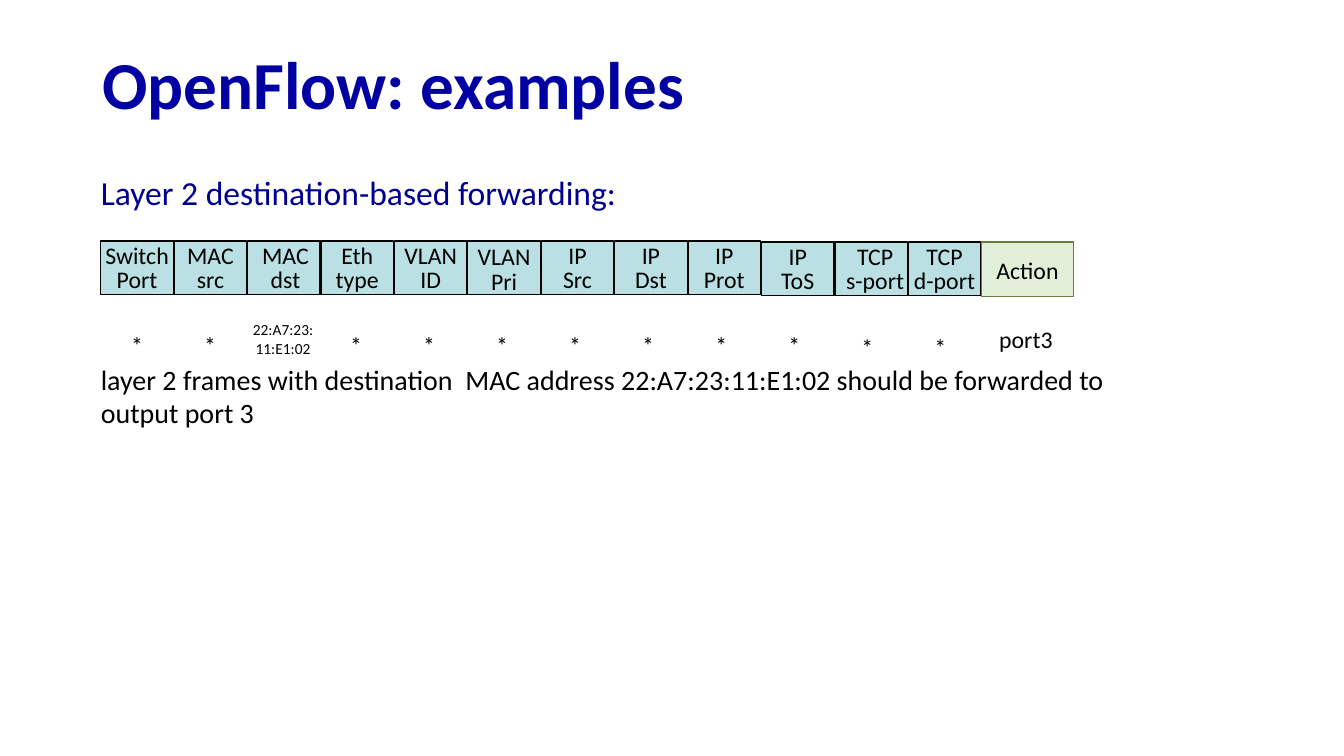
from pptx import Presentation
from pptx.dml.color import RGBColor
from pptx.enum.shapes import MSO_SHAPE
from pptx.enum.text import MSO_ANCHOR, PP_ALIGN
from pptx.util import Cm, Pt


def color(value):
    return RGBColor.from_string(value)


def write(shape, text, size, hue="000000", align=PP_ALIGN.CENTER, spacing=1.0,
          margins=(0, 0, 0, 0), bold=False):
    frame = shape.text_frame
    frame.word_wrap = True
    frame.vertical_anchor = MSO_ANCHOR.MIDDLE
    frame.margin_left, frame.margin_top, frame.margin_right, frame.margin_bottom = (
        Cm(margin) for margin in margins)
    frame.text = text
    for para in frame.paragraphs:
        para.alignment = align
        para.line_spacing = spacing
        for span in para.runs:
            span.font.name = "Calibri"
            span.font.size = Pt(size)
            span.font.bold = bold
            span.font.color.rgb = color(hue)


deck = Presentation()
deck.slide_width, deck.slide_height = Cm(33.87), Cm(19.05)
page = deck.slides.add_slide(deck.slide_layouts[6])

# Title, subtitle and explanation
title = page.shapes.add_textbox(Cm(2.33), Cm(0.97), Cm(29.21), Cm(2.49))
write(title, "OpenFlow: examples", 48, "0000A3", PP_ALIGN.LEFT, 0.9,
      (0.25, 0.13, 0.25, 0.13), bold=True)

subtitle = page.shapes.add_textbox(Cm(2.54), Cm(4.32), Cm(13.13), Cm(1.02))
write(subtitle, "Layer 2 destination-based forwarding:", 24, "000090", PP_ALIGN.LEFT)
subtitle.text_frame.word_wrap = False

explanation = page.shapes.add_textbox(Cm(2.54), Cm(9.12), Cm(25.96), Cm(1.7))
write(explanation, "layer 2 frames with destination  MAC address 22:A7:23:11:E1:02 "
      "should be forwarded to output port 3", 20, align=PP_ALIGN.LEFT)

# Flow table: header, left and top inset of its text, matched value
fields = [
    ("Switch\nPort", 0, 0.08, "*"),
    ("MAC\nsrc", 0, 0.08, "*"),
    ("MAC\ndst", 0.08, 0.08, "22:A7:23:\n11:E1:02"),
    ("Eth\ntype", 0, 0.08, "*"),
    ("VLAN\nID", 0, 0.08, "*"),
    ("VLAN\nPri", 0, 0.15, "*"),
    ("IP\nSrc", 0, 0.08, "*"),
    ("IP\nDst", 0, 0.08, "*"),
    ("IP\nProt", 0, 0.08, "*"),
    ("IP\nToS", 0, 0.08, "*"),
    ("TCP\ns-port", 0.2, 0.08, "*"),
    ("TCP\nd-port", 0, 0.08, "*"),
    ("Action", 0, 0.15, "port3"),
]
for index, (header, inset_left, inset_top, value) in enumerate(fields):
    is_action = header == "Action"
    cell = page.shapes.add_shape(
        MSO_SHAPE.RECTANGLE, Cm(2.54 + 1.85 * index), Cm(6.1 if index > 8 else 6.07),
        Cm(2.31 if is_action else 1.83), Cm(1.37 if is_action else 1.35))
    cell.shadow.inherit = False
    cell.fill.solid()
    cell.fill.fore_color.rgb = color("E2F0D9" if is_action else "BBE0E3")
    cell.line.color.rgb = color("697D3A" if is_action else "000000")
    cell.line.width = Pt(1)
    write(cell, header, 17, spacing=0.85, margins=(inset_left, inset_top, 0, 0))

    # Matched value below the header
    left = 24.94 if is_action else 2.54 + 1.84 * index
    top = 8.26
    if value != "*":
        top = 8.1
    elif header.startswith("TCP"):
        top = 8.31
    match = page.shapes.add_textbox(Cm(left), Cm(top), Cm(1.83), Cm(0.89))
    write(match, value, 11 if ":" in value else 17)

deck.save("out.pptx")
